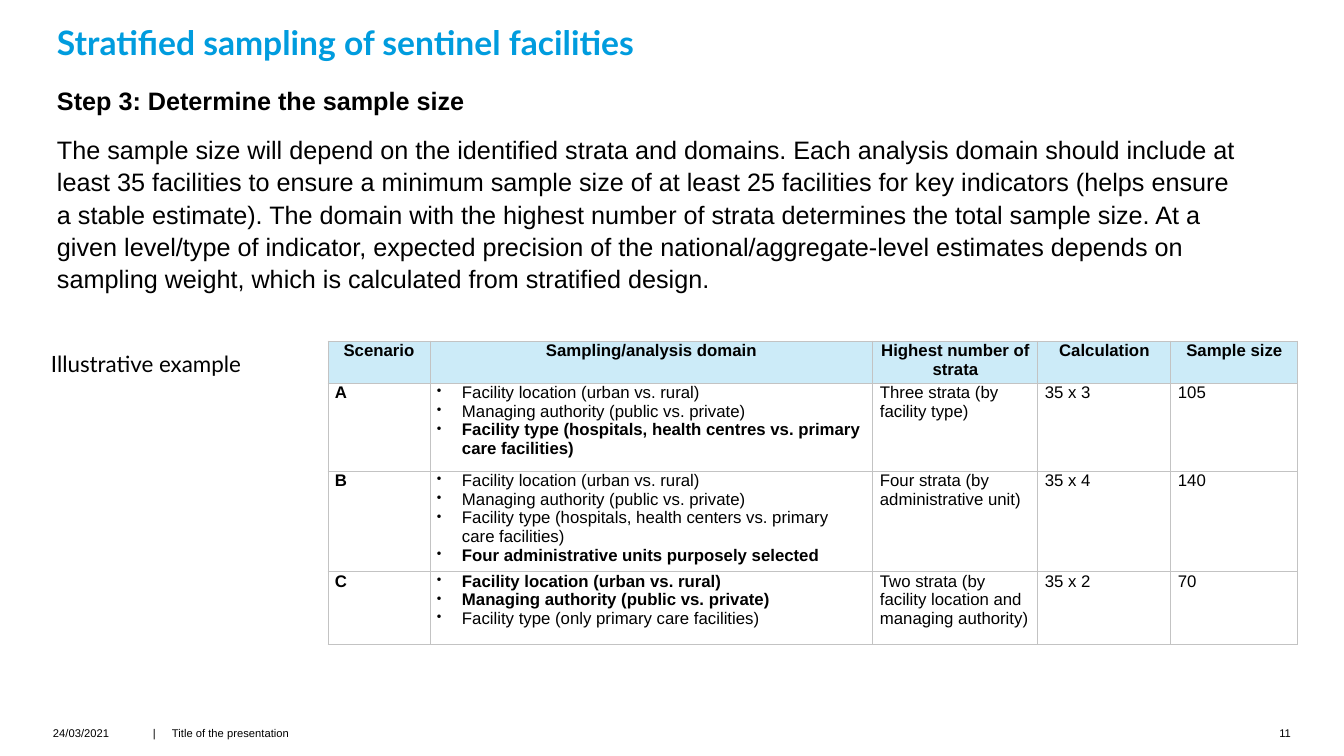
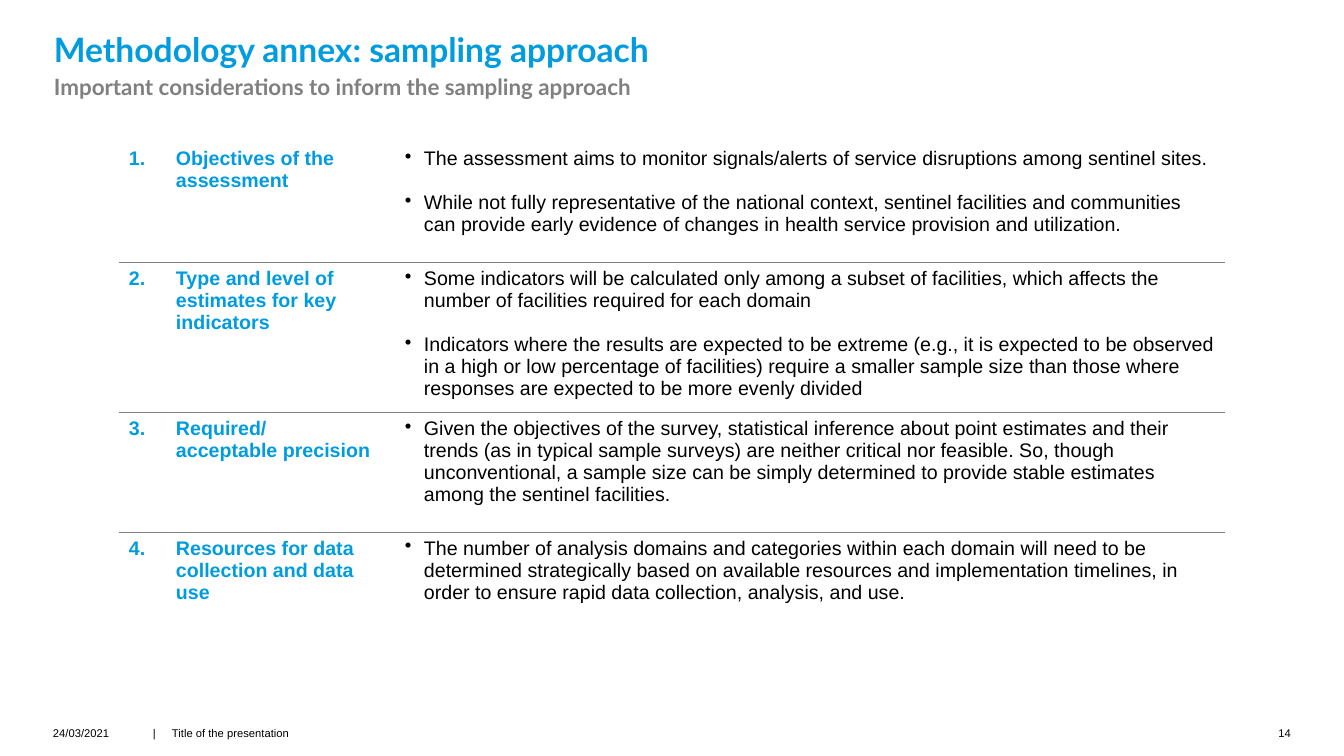
from lxml.etree import SubElement
from pptx import Presentation
from pptx.dml.color import RGBColor
from pptx.enum.text import MSO_ANCHOR, PP_ALIGN
from pptx.oxml.ns import qn
from pptx.util import Pt

SCALE = 12192000 / 1344  # EMU in one px
BLUE = RGBColor(0x00, 0x9C, 0xDE)
PALE = RGBColor(0xCC, 0xEB, 0xF8)
GREY = RGBColor(0x80, 0x80, 0x80)
RULE = RGBColor(0xC3, 0xC3, 0xC3)
BLACK = RGBColor(0x00, 0x00, 0x00)
WHITE = RGBColor(0xFF, 0xFF, 0xFF)


def px(n):
    return round(n * SCALE)


def bold(text):
    return text, {"bold": True}


def write(frame, text, **base):
    """Fill a frame with one text or a list of texts, each may be (text, format)."""
    items = text if isinstance(text, list) else [text]
    for i, item in enumerate(items):
        line, own = item if isinstance(item, tuple) else (item, {})
        fmt = {**base, **own}
        para = frame.paragraphs[0] if i == 0 else frame.add_paragraph()
        props = para._p.get_or_add_pPr()
        if "indent" in fmt:
            props.set("marL", str(px(fmt["indent"])))
            props.set("indent", str(-px(fmt["indent"])))
            SubElement(props, qn("a:buSzPct"), val=str(fmt.get("dot", 100) * 1000))
            SubElement(props, qn("a:buChar"), char="•")
        if "tab" in fmt:
            stops = SubElement(props, qn("a:tabLst"))
            SubElement(stops, qn("a:tab"), pos=str(px(fmt["tab"])), algn="l")
        para.alignment = fmt.get("align", PP_ALIGN.LEFT)
        para.line_spacing = fmt.get("lead", 1.0)
        para.space_before = Pt(fmt.get("before", 0) if i else 0)
        para.space_after = Pt(fmt.get("after", 0))
        run = para.add_run()
        run.text = line
        font = run.font
        font.name = fmt.get("font", "Arial")
        font.size = Pt(fmt.get("size", 12))
        font.bold = fmt.get("bold", False)
        font.color.rgb = fmt.get("color", BLACK)


class Deck:
    def __init__(self):
        self.prs = Presentation()
        self.prs.slide_width, self.prs.slide_height = px(1344), px(756)
        self.slide = None

    def page(self, number, title, box):
        """Start a slide with its title and footer."""
        self.slide = self.prs.slides.add_slide(self.prs.slide_layouts[6])
        self.text(box, title, anchor=MSO_ANCHOR.BOTTOM, pad=(2, 39),
                  font="Lato", size=24, bold=True, color=BLUE, lead=0.9)
        foot = {"pad": (0, 0), "size": 8}
        self.text((53, 726, 87, 20), "24/03/2021", **foot)
        self.text((153, 726, 328, 20), "|\tTitle of the presentation", tab=19, **foot)
        self.text((1259, 726, 32, 20), str(number), align=PP_ALIGN.RIGHT, **foot)

    def text(self, box, text, anchor=MSO_ANCHOR.TOP, pad=(2, 2), **fmt):
        frame = self.slide.shapes.add_textbox(*map(px, box)).text_frame
        frame.word_wrap = True
        frame.vertical_anchor = anchor
        frame.margin_left, frame.margin_right = map(px, pad)
        frame.margin_top = frame.margin_bottom = 0
        write(frame, text, **fmt)

    def table(self, spot, cols, rows, cells, looks, edge, pad, head=None):
        """Draw a table; looks holds one text format per column."""
        table = self.slide.shapes.add_table(
            len(rows), len(cols), *map(px, (*spot, sum(cols), sum(rows)))).table
        table.first_row = table.horz_banding = False
        for col, width in zip(table.columns, cols):
            col.width = px(width)
        for r, (row, height) in enumerate(zip(table.rows, rows)):
            row.height = px(height)
            top = head is not None and r == 0
            for c, cell in enumerate(row.cells):
                cell.margin_left = cell.margin_right = px(pad[0])
                cell.margin_top = cell.margin_bottom = px(pad[1])
                self.edges(cell, edge(r))
                cell.fill.solid()
                cell.fill.fore_color.rgb = PALE if top else WHITE
                write(cell.text_frame, cells[r][c], **(head if top else looks[c]))

    def edges(self, cell, colors):
        """Set left, right, top and bottom borders."""
        props = cell._tc.get_or_add_tcPr()
        for side, color in zip("LRTB", colors):
            line = SubElement(props, qn(f"a:ln{side}"), w=str(Pt(0.75)))
            fill = SubElement(line, qn("a:solidFill"))
            SubElement(fill, qn("a:srgbClr"), val=str(color))


def sample(deck):
    deck.page(11, "Stratified sampling of sentinel facilities", (55, 21, 899, 42))
    deck.text((55, 83, 1192, 197), [
        bold("Step 3: Determine the sample size"),
        "The sample size will depend on the identified strata and domains. Each analysis "
        "domain should include at least 35 facilities to ensure a minimum sample size of at "
        "least 25 facilities for key indicators (helps ensure a stable estimate). The domain "
        "with the highest number of strata determines the total sample size. At a given "
        "level/type of indicator, expected precision of the national/aggregate-level "
        "estimates depends on sampling weight, which is calculated from stratified design.",
    ], size=18, lead=1.07, before=6, after=6)
    deck.text((49, 346, 269, 32), "Illustrative example", anchor=MSO_ANCHOR.MIDDLE,
              font="Lato", size=16, lead=1.1, after=6)

    # Scenario table
    place = "Facility location (urban vs. rural)"
    owner = "Managing authority (public vs. private)"
    cells = [
        ["Scenario", "Sampling/analysis domain", "Highest number of strata",
         "Calculation", "Sample size"],
        ["A", [place, owner,
               bold("Facility type (hospitals, health centres vs. primary care facilities)")],
         "Three strata (by facility type)", "35 x 3", "105"],
        ["B", [place, owner,
               "Facility type (hospitals, health centers vs. primary care facilities)",
               bold("Four administrative units purposely selected")],
         "Four strata (by administrative unit)", "35 x 4", "140"],
        ["C", [bold(place), bold(owner), "Facility type (only primary care facilities)"],
         "Two strata (by facility location and managing authority)", "35 x 2", "70"],
    ]
    deck.table((328, 341), (102, 443, 165, 133, 127), (42, 88, 94, 73), cells,
               looks=[{"bold": True}, {"indent": 25, "dot": 80}, {}, {}, {}],
               edge=lambda r: [RULE] * 4, pad=(7, 0),
               head={"bold": True, "align": PP_ALIGN.CENTER})


def annex(deck):
    deck.page(14, "Methodology annex: sampling approach", (52, 38, 899, 32))
    deck.text((52, 71, 899, 32), "Important considerations to inform the sampling approach",
              font="Lato", size=16, bold=True, color=GREY, lead=1.1, after=6)

    # Table of points to consider
    points = [
        ("Objectives of the assessment", [
            "The assessment aims to monitor signals/alerts of service disruptions among "
            "sentinel sites.",
            "While not fully representative of the national context, sentinel facilities and "
            "communities can provide early evidence of changes in health service provision "
            "and utilization."]),
        ("Type and level of estimates for key indicators", [
            "Some indicators will be calculated only among a subset of facilities, which "
            "affects the number of facilities required for each domain",
            "Indicators where the results are expected to be extreme (e.g., it is expected to "
            "be observed in a high or low percentage of facilities) require a smaller sample "
            "size than those where responses are expected to be more evenly divided"]),
        (["Required/", "acceptable precision"],
            "Given the objectives of the survey, statistical inference about point estimates "
            "and their trends (as in typical sample surveys) are neither critical nor "
            "feasible. So, though unconventional, a sample size can be simply determined to "
            "provide stable estimates among the sentinel facilities."),
        ("Resources for data collection and data use",
            "The number of analysis domains and categories within each domain will need to be "
            "determined strategically based on available resources and implementation "
            "timelines, in order to ensure rapid data collection, analysis, and use."),
    ]
    cells = [(f"{n}.", *point) for n, point in enumerate(points, 1)]
    last = len(points) - 1
    label = {"size": 14, "bold": True, "color": BLUE}
    deck.table((119, 143), (47, 229, 830), (120, 142, 120, 130), cells,
               looks=[label, label, {"size": 14, "indent": 19, "before": 15.6}],
               edge=lambda r: [WHITE, WHITE, GREY if r else WHITE,
                               GREY if r < last else WHITE],
               pad=(10, 5))


def main():
    deck = Deck()
    sample(deck)
    annex(deck)
    deck.prs.save("out.pptx")


if __name__ == "__main__":
    main()
